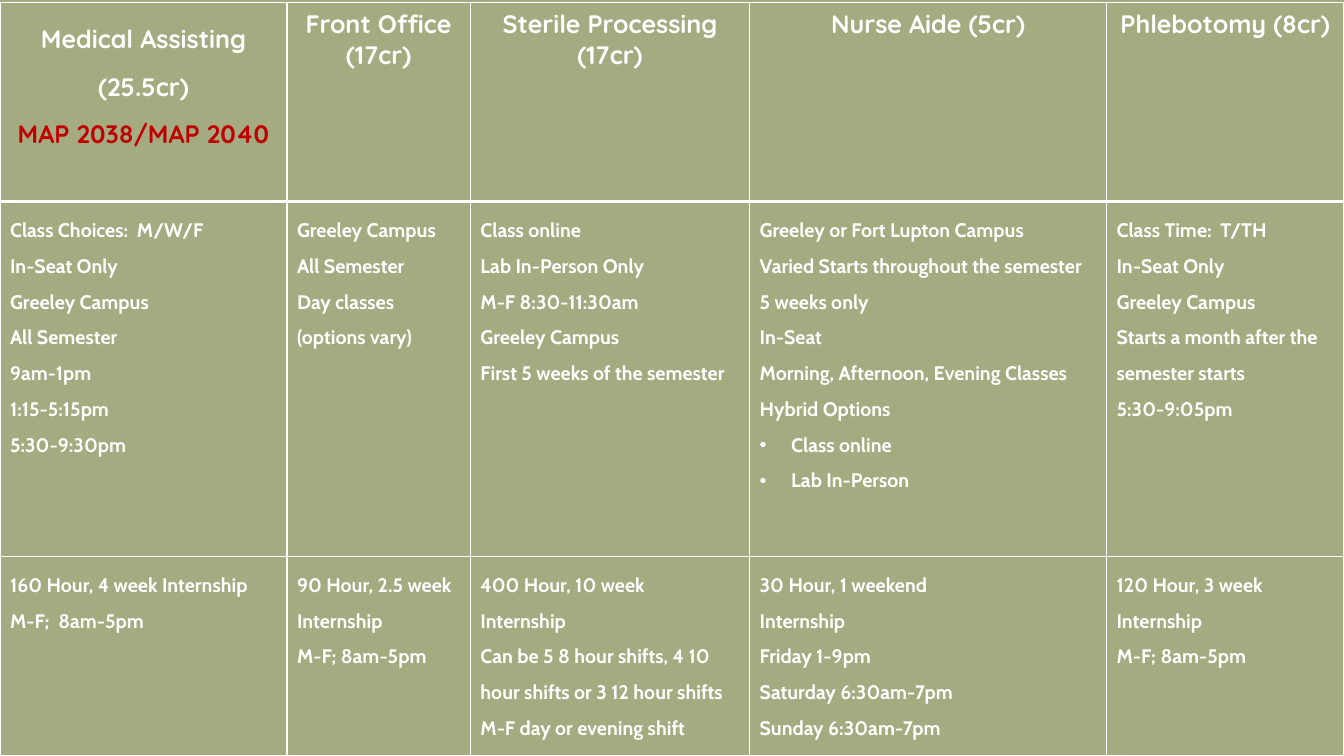
import dataclasses

import lxml.etree
import pptx
import pptx.dml.color
import pptx.enum.text
import pptx.oxml.ns
import pptx.util

Pt = pptx.util.Pt
qn = pptx.oxml.ns.qn


@dataclasses.dataclass(frozen=True)
class Theme:
    background: str = "A5AB81"
    text: str = "FFFFFF"
    accent: str = "C00000"
    heading_font: str = "Quicksand"
    body_font: str = "Cabin"
    heading_size: float = 18
    body_size: float = 14
    thin_border: float = 1
    thick_border: float = 3
    bullet_indent: float = 22.5


COLUMN_WIDTHS = [205, 131, 199.5, 255, 169.5]
ROW_HEIGHTS = [142, 253.5, 142.5]
TABLE_TOP = 2
BULLET = "• "

HEADINGS = [
    ["Medical Assisting (25.5cr)", "MAP 2038/MAP 2040"],
    ["Front Office (17cr)"],
    ["Sterile Processing (17cr)"],
    ["Nurse Aide (5cr)"],
    ["Phlebotomy (8cr)"],
]
CLASSES = [
    ["Class Choices:  M/W/F", "In-Seat Only", "Greeley Campus", "All Semester",
     "9am-1pm", "1:15-5:15pm", "5:30-9:30pm"],
    ["Greeley Campus", "All Semester", "Day classes (options vary)"],
    ["Class online", "Lab In-Person Only", "M-F 8:30-11:30am", "Greeley Campus",
     "First 5 weeks of the semester"],
    ["Greeley or Fort Lupton Campus", "Varied Starts throughout the semester",
     "5 weeks only", "In-Seat", "Morning, Afternoon, Evening Classes",
     "Hybrid Options", BULLET + "Class online", BULLET + "Lab In-Person"],
    ["Class Time:  T/TH", "In-Seat Only", "Greeley Campus",
     "Starts a month after the semester starts", "5:30-9:05pm"],
]
INTERNSHIPS = [
    ["160 Hour, 4 week Internship", "M-F;  8am-5pm"],
    ["90 Hour, 2.5 week", "Internship", "M-F; 8am-5pm"],
    ["400 Hour, 10 week", "Internship",
     "Can be 5 8 hour shifts, 4 10 hour shifts or 3 12 hour shifts",
     "M-F day or evening shift"],
    ["30 Hour, 1 weekend", "Internship", "Friday 1-9pm",
     "Saturday 6:30am-7pm", "Sunday 6:30am-7pm"],
    ["120 Hour, 3 week", "Internship", "M-F; 8am-5pm"],
]


class SlideBuilder:
    def __init__(self, slide, theme):
        self.slide = slide
        self.theme = theme

    def color(self, value):
        return pptx.dml.color.RGBColor.from_string(value)

    def background(self):
        fill = self.slide.background.fill
        fill.solid()
        fill.fore_color.rgb = self.color(self.theme.background)

    def table(self, rows):
        """Draw the grid; the first row holds the headings."""
        frame = self.slide.shapes.add_table(
            len(ROW_HEIGHTS), len(COLUMN_WIDTHS), Pt(0), Pt(TABLE_TOP),
            Pt(sum(COLUMN_WIDTHS)), Pt(sum(ROW_HEIGHTS)))
        table = frame.table
        table.horz_banding = False
        for column, width in zip(table.columns, COLUMN_WIDTHS):
            column.width = Pt(width)
        for row, height in zip(table.rows, ROW_HEIGHTS):
            row.height = Pt(height)
        for row_index, row_texts in enumerate(rows):
            for column_index, lines in enumerate(row_texts):
                self.cell(table.cell(row_index, column_index), row_index, lines)

    def cell(self, cell, row_index, lines):
        cell.fill.solid()
        cell.fill.fore_color.rgb = self.color(self.theme.background)
        self.borders(cell, row_index)
        for index, line in enumerate(lines):
            frame = cell.text_frame
            paragraph = frame.paragraphs[0] if index == 0 else frame.add_paragraph()
            if row_index == 0:
                self.heading(paragraph, line, index, len(lines))
            else:
                self.body(paragraph, line)

    def heading(self, paragraph, text, index, line_count):
        """Write a heading; a second line is set in the accent colour."""
        theme = self.theme
        paragraph.alignment = pptx.enum.text.PP_ALIGN.CENTER
        if line_count > 1:
            paragraph.line_spacing = 1.5
        color = theme.accent if index else theme.text
        self.run(paragraph, text, theme.heading_font, theme.heading_size, color)

    def body(self, paragraph, text):
        theme = self.theme
        paragraph.line_spacing = 1.5
        if text.startswith(BULLET):
            self.bullet(paragraph)
        self.run(paragraph, text.removeprefix(BULLET), theme.body_font,
                 theme.body_size, theme.text)

    def run(self, paragraph, text, font_name, size, color):
        run = paragraph.add_run()
        run.text = text
        run.font.name = font_name
        run.font.size = Pt(size)
        run.font.bold = True
        run.font.color.rgb = self.color(color)

    def bullet(self, paragraph):
        properties = paragraph._p.get_or_add_pPr()
        indent = Pt(self.theme.bullet_indent)
        properties.set("marL", str(indent))
        properties.set("indent", str(-indent))
        lxml.etree.SubElement(properties, qn("a:buFont")).set("typeface", "Arial")
        lxml.etree.SubElement(properties, qn("a:buChar")).set("char", BULLET.strip())

    def borders(self, cell, row_index):
        """Put thin lines round a cell, and a thick one under the headings."""
        theme = self.theme
        thick_side = {0: "lnB", 1: "lnT"}.get(row_index)
        properties = cell._tc.get_or_add_tcPr()
        for position, side in enumerate(("lnL", "lnR", "lnT", "lnB")):
            width = theme.thick_border if side == thick_side else theme.thin_border
            line = lxml.etree.Element(qn("a:" + side), w=str(Pt(width)))
            fill = lxml.etree.SubElement(line, qn("a:solidFill"))
            lxml.etree.SubElement(fill, qn("a:srgbClr")).set("val", theme.text)
            properties.insert(position, line)


def main():
    presentation = pptx.Presentation()
    presentation.slide_width = Pt(960)
    presentation.slide_height = Pt(540)
    slide = presentation.slides.add_slide(presentation.slide_layouts[6])
    builder = SlideBuilder(slide, Theme())
    builder.background()
    builder.table([HEADINGS, CLASSES, INTERNSHIPS])
    presentation.save("out.pptx")


if __name__ == "__main__":
    main()
